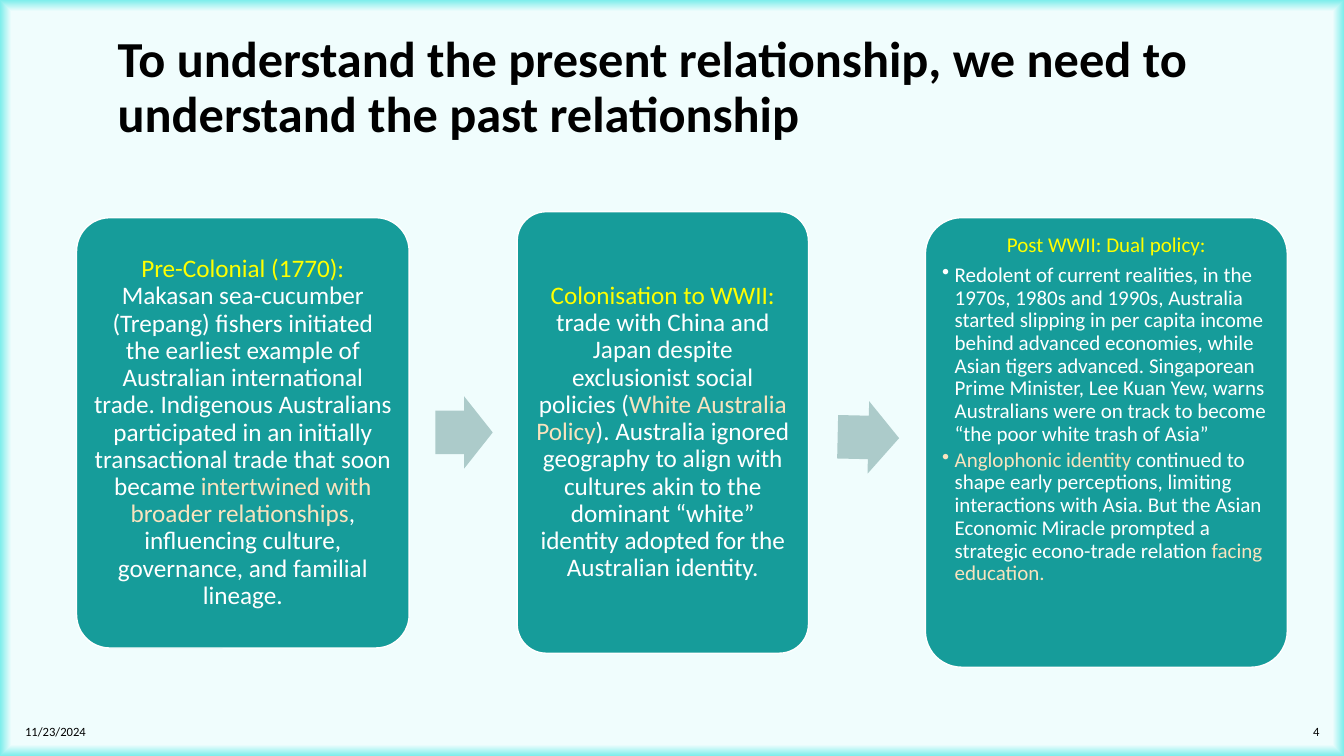
from lxml.etree import SubElement
from pptx import Presentation
from pptx.dml.color import RGBColor
from pptx.enum.shapes import MSO_SHAPE
from pptx.enum.text import MSO_ANCHOR, PP_ALIGN
from pptx.oxml import parse_xml
from pptx.oxml.ns import nsdecls, qn
from pptx.util import Pt

TEAL, ARROW = "169C9A", "ACCBCA"
WHITE, BLACK, YELLOW, CREAM = "FFFFFF", "000000", "FFFF00", "F9E3BE"


def color(code):
    return RGBColor.from_string(code)


def write(frame, paragraphs, size, bold=False, align=PP_ALIGN.LEFT, anchor=MSO_ANCHOR.MIDDLE,
          spacing=None, after=0, bullet_after=2.25):
    """Each paragraph is a list of (text, color) spans; those after the first are bulleted."""
    frame.word_wrap = True
    frame.vertical_anchor = anchor
    for index, spans in enumerate(paragraphs):
        para = frame.add_paragraph() if index else frame.paragraphs[0]
        para.alignment = PP_ALIGN.LEFT if index else align
        para.line_spacing = spacing
        para.space_after = Pt(bullet_after if index else after)
        for text, code in spans:
            span = para.add_run()
            span.text = text
            span.font.name, span.font.size, span.font.bold = "Calibri", Pt(size), bold
            span.font.color.rgb = color(code)
        if index:
            properties = para._p.get_or_add_pPr()
            properties.set("marL", str(Pt(9)))
            properties.set("indent", str(-Pt(9)))
            SubElement(properties, qn("a:buChar"), char="•")


deck = Presentation()
deck.slide_width, deck.slide_height = Pt(960), Pt(540)
page = deck.slides.add_slide(deck.slide_layouts[6])

# Pale background with a bright rim
page.background.fill.solid()
background = page.background._cSld.bg.bgPr
rim = [(97, "F0FDFD"), (100, "7CEDEB"), (100, "7CEDEB"), (100, "A8F3F2")]
stops = "".join(f'<a:gs pos="{position * 1000}"><a:srgbClr val="{code}"/></a:gs>'
                for position, code in rim)
gradient = parse_xml(
    f'<a:gradFill {nsdecls("a")} rotWithShape="1"><a:gsLst>{stops}</a:gsLst><a:path path="shape">'
    '<a:fillToRect l="50000" t="50000" r="50000" b="50000"/></a:path></a:gradFill>')
background.replace(background.find(qn("a:solidFill")), gradient)

# Title, date and slide number
labels = [
    ("To understand the present relationship, we need to understand the past relationship",
     (77, 20.9, 838.8, 89.3), dict(size=36, bold=True, anchor=MSO_ANCHOR.TOP, spacing=0.9)),
    ("11/23/2024", (10.8, 508.3, 275, 28.8), dict(size=9, after=6)),
    ("4", (915.8, 508.3, 33.8, 28.8), dict(size=9, after=6, align=PP_ALIGN.RIGHT)),
]
for text, place, style in labels:
    box = page.shapes.add_textbox(*map(Pt, place))
    write(box.text_frame, [[(text, BLACK)]], **style)

# Three periods of the relationship
pre_colonial = [[
    ("Pre-Colonial (1770): ", YELLOW),
    ("Makasan sea-cucumber (Trepang) fishers initiated the earliest example of Australian "
     "international trade. Indigenous Australians participated in an initially transactional "
     "trade that soon became ", WHITE),
    ("intertwined with broader relationships", CREAM),
    (", influencing culture, governance, and familial lineage.", WHITE),
]]
colonisation = [[
    ("Colonisation to WWII: ", YELLOW),
    ("trade with China and Japan despite exclusionist social policies (", WHITE),
    ("White Australia Policy", CREAM),
    ("). Australia ignored geography to align with cultures akin to the dominant “white” "
     "identity adopted for the Australian identity.", WHITE),
]]
post_war = [
    [("Post WWII: Dual policy:", YELLOW)],
    [("Redolent of current realities, in the 1970s, 1980s and 1990s, Australia started slipping "
      "in per capita income behind advanced economies, while Asian tigers advanced. Singaporean "
      "Prime Minister, Lee Kuan Yew, warns Australians were on track to become “the poor white "
      "trash of Asia”", WHITE)],
    [("Anglophonic identity ", CREAM),
     ("continued to shape early perceptions, limiting interactions with Asia. But the Asian "
      "Economic Miracle prompted a strategic econo-trade relation", WHITE),
     (" facing education.", CREAM)],
]
periods = [
    (pre_colonial, (54.7, 155.5, 237.6, 307.4), 18, 5.04, MSO_ANCHOR.MIDDLE),
    (colonisation, (369.4, 151.2, 208.1, 315.4), 18, 5.04, MSO_ANCHOR.MIDDLE),
    (post_war, (661, 155.5, 258.5, 321.1), 15, 4.32, MSO_ANCHOR.TOP),
]
for paragraphs, place, size, margin, anchor in periods:
    card = page.shapes.add_shape(MSO_SHAPE.ROUNDED_RECTANGLE, *map(Pt, place))
    card.adjustments[0] = 0.1
    card.shadow.inherit = False
    card.fill.solid()
    card.fill.fore_color.rgb = color(TEAL)
    card.line.color.rgb = color(WHITE)
    card.line.width = Pt(1)
    frame = card.text_frame
    frame.margin_left = frame.margin_right = frame.margin_top = frame.margin_bottom = Pt(margin)
    write(frame, paragraphs, size, align=PP_ALIGN.CENTER, anchor=anchor, spacing=0.9,
          after=0.35 * size, bullet_after=0.15 * size)

# Arrows between the periods
for place, angle in [((311, 283, 41, 51.8), 0), ((598.3, 286.6, 43.9, 51.8), 1.3)]:
    arrow = page.shapes.add_shape(MSO_SHAPE.RIGHT_ARROW, *map(Pt, place))
    arrow.adjustments[0], arrow.adjustments[1] = 0.6, 0.5
    arrow.rotation = angle
    arrow.shadow.inherit = False
    arrow.fill.solid()
    arrow.fill.fore_color.rgb = color(ARROW)
    arrow.line.fill.background()

deck.save("out.pptx")
